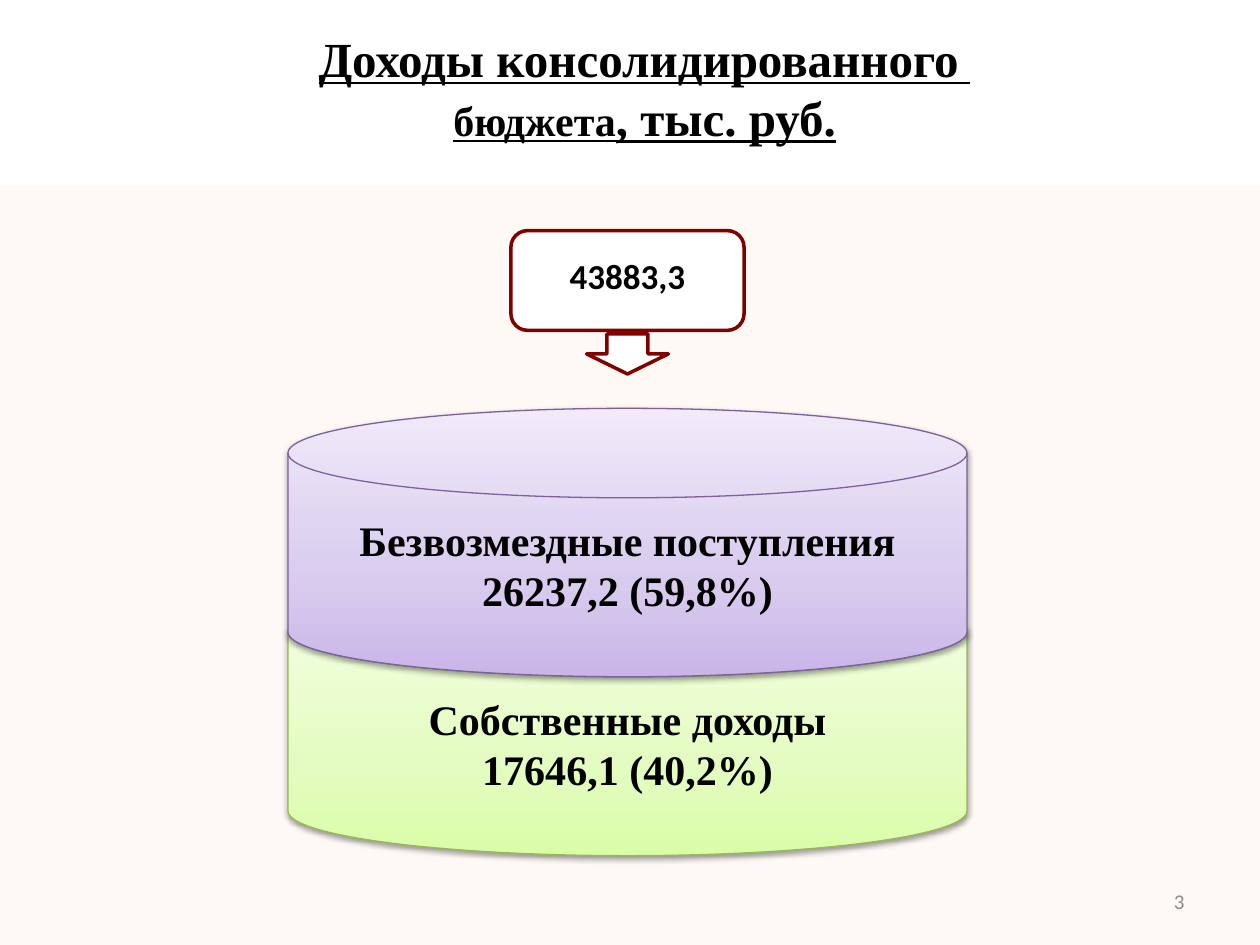
from lxml import etree
from pptx import Presentation
from pptx.dml.color import RGBColor
from pptx.enum import shapes, text
from pptx.oxml import ns
from pptx.util import Cm, Pt

BLACK = RGBColor(0x00, 0x00, 0x00)
WHITE = RGBColor(0xFF, 0xFF, 0xFF)
GRAY = RGBColor(0x8C, 0x8C, 0x8C)
MAROON = RGBColor(0x80, 0x00, 0x00)
PEACH = RGBColor(0xFD, 0xEA, 0xDA)
GREEN_LINE = RGBColor(0x98, 0xB9, 0x55)
PURPLE_LINE = RGBColor(0x7D, 0x60, 0xA0)
GREENS = [(0, RGBColor(0xDA, 0xFD, 0xA7)), (35, RGBColor(0xE4, 0xFC, 0xC2)),
          (100, RGBColor(0xF5, 0xFF, 0xE7))]
PURPLES = [(0, RGBColor(0xC9, 0xB5, 0xE8)), (35, RGBColor(0xD8, 0xCB, 0xEE)),
           (100, RGBColor(0xF0, 0xEA, 0xF9))]

SERIF, SANS = "Times New Roman", "Calibri"
TITLE = [("Доходы консолидированного ", 28), ("\v", 28), ("бюджета", 24), (", тыс. руб.", 28)]
TOTAL = "43883,3"
PAGE_NUMBER = "3"
INCOMES = [
    (["Собственные доходы", "17646,1 (40,2%)"], GREENS, GREEN_LINE),
    (["Безвозмездные поступления", "26237,2 (59,8%)"], PURPLES, PURPLE_LINE),
]

WIDTH, HEIGHT = 25.4, 19.05
BAND_TOP = 3.73
CENTER = 12.65
DISK_WIDTH, DISK_HEIGHT, LOWEST_DISK_TOP = 13.69, 5.41, 11.84
DISK_STEP = DISK_HEIGHT * 2 / 3


def add_child(parent, tag, **attributes):
    return etree.SubElement(parent, ns.qn(tag), {key: str(value) for key, value in attributes.items()})


def add_shape(page, kind, left, top, width, height, color=None, line=None, weight=2):
    shape = page.shapes.add_shape(kind, Cm(left), Cm(top), Cm(width), Cm(height))
    shape.shadow.inherit = False
    if color is not None:
        shape.fill.solid()
        shape.fill.fore_color.rgb = color
    if line is None:
        shape.line.fill.background()
    else:
        shape.line.color.rgb = line
        shape.line.width = Pt(weight)
    return shape


def add_centered(page, kind, top, width, height, *style):
    return add_shape(page, kind, CENTER - width / 2, top, width, height, *style)


def add_text_box(page, left, top, width, height):
    return page.shapes.add_textbox(Cm(left), Cm(top), Cm(width), Cm(height))


def write(box, lines, size, name, color=BLACK, bold=True, align=text.PP_ALIGN.CENTER):
    frame = box.text_frame
    frame.word_wrap = True
    frame.vertical_anchor = text.MSO_ANCHOR.MIDDLE
    frame.text = "\n".join(lines)
    for para in frame.paragraphs:
        para.alignment = align
        para.font.size = Pt(size)
        para.font.name = name
        para.font.bold = bold
        para.font.color.rgb = color
    return frame.paragraphs[0]


def set_gradient(shape, stops):
    shape.fill.gradient()
    shape.fill.gradient_angle = 90
    stop_list = shape.element.spPr.find(".//" + ns.qn("a:gsLst"))
    stop_list.clear()
    for position, color in stops:
        stop = add_child(stop_list, "a:gs", pos=position * 1000)
        add_child(stop, "a:srgbClr", val=color)


def set_shadow(shape):
    effects = shape.element.spPr.find(ns.qn("a:effectLst"))
    shadow = add_child(effects, "a:outerShdw", blurRad=Pt(3.1), dist=Pt(1.6),
                       dir=90 * 60000, rotWithShape=0)
    color = add_child(shadow, "a:srgbClr", val=BLACK)
    add_child(color, "a:alpha", val=38000)


def add_title(page):
    para = write(add_text_box(page, 2.39, 0.53, 21.21, 2.46), [], 28, SERIF)
    para.font.underline = True
    for words, size in TITLE:
        if words == "\v":
            para.add_line_break()
            continue
        span = para.add_run()
        span.text = words
        span.font.size = Pt(size)


def main():
    deck = Presentation()
    deck.slide_width, deck.slide_height = Cm(WIDTH), Cm(HEIGHT)
    page = deck.slides.add_slide(deck.slide_layouts[6])
    kinds = shapes.MSO_SHAPE

    band = add_shape(page, kinds.RECTANGLE, 0, BAND_TOP, WIDTH, HEIGHT - BAND_TOP, PEACH)
    band_color = band.element.spPr.find(ns.qn("a:solidFill"))[0]
    add_child(band_color, "a:alpha", val=26000)

    add_title(page)

    total = add_centered(page, kinds.FLOWCHART_ALTERNATE_PROCESS, 4.65, 4.7, 2.01, WHITE, MAROON)
    write(total, [TOTAL], 20, SANS).line_spacing = 0.7
    add_centered(page, kinds.DOWN_ARROW, 6.73, 1.65, 0.81, WHITE, MAROON)

    for index, (lines, stops, line) in enumerate(INCOMES):
        disk = add_centered(page, kinds.FLOWCHART_MAGNETIC_DISK, LOWEST_DISK_TOP - index * DISK_STEP,
                            DISK_WIDTH, DISK_HEIGHT, None, line, 0.75)
        set_gradient(disk, stops)
        set_shadow(disk)
        write(disk, lines, 24, SERIF)

    number = add_text_box(page, 18.21, 17.65, 5.92, 1.02)
    write(number, [PAGE_NUMBER], 12, SANS, GRAY, False, text.PP_ALIGN.RIGHT)

    deck.save("out.pptx")


if __name__ == "__main__":
    main()
